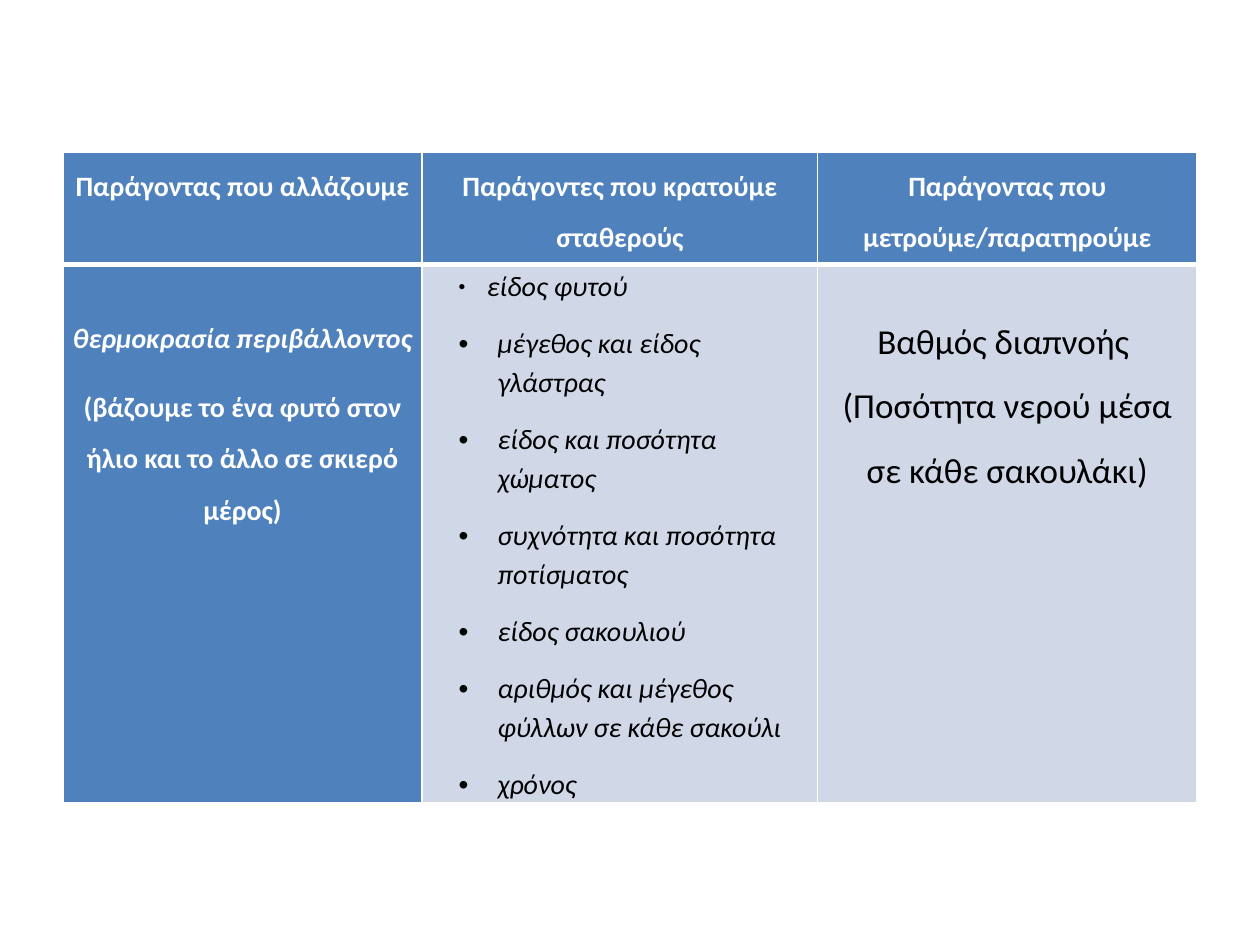
"""Build a slide with a table of the changed, constant and measured factors of an experiment."""
from dataclasses import dataclass

from lxml import etree
from pptx import Presentation
from pptx.dml.color import RGBColor
from pptx.enum import text as t
from pptx.oxml import ns
from pptx.util import Inches, Pt

WHITE = RGBColor(0xFF, 0xFF, 0xFF)
BLACK = RGBColor(0x00, 0x00, 0x00)
BLUE = RGBColor(0x4F, 0x81, 0xBD)
PALE = RGBColor(0xD0, 0xD8, 0xE8)
FONT = "Calibri"
COLUMN_WIDTHS = (2.85, 3.14, 3.01)
ROW_HEIGHTS = (0.89, 4.19)
BULLET_HANG = 0.31


@dataclass(frozen=True)
class Line:
    text: str
    size: int = 16
    italic: bool = False
    bullet_indent: float = 0
    hang: float = BULLET_HANG
    lead: str = ""
    after: int = 0


@dataclass(frozen=True)
class Factor:
    heading: str
    lines: tuple[Line, ...]
    fill: RGBColor
    color: RGBColor
    bold: bool = False
    top: float = 0


def constant(text: str) -> Line:
    return Line(text, italic=True, bullet_indent=0.53, after=10)


FACTORS = (
    Factor("Παράγοντας που αλλάζουμε", (
        Line("θερμοκρασία περιβάλλοντος ", italic=True, after=10),
        Line("(βάζουμε το ένα φυτό στον ήλιο και το άλλο σε σκιερό μέρος)", after=10),
    ), BLUE, WHITE, bold=True, top=0.32),
    Factor("Παράγοντες που κρατούμε σταθερούς", (
        Line("είδος φυτού", italic=True, bullet_indent=0.41, hang=0.19, lead=" ", after=10),
        constant("μέγεθος και είδος γλάστρας"),
        constant("είδος και ποσότητα χώματος"),
        constant("συχνότητα και ποσότητα ποτίσματος"),
        constant("είδος σακουλιού"),
        constant("αριθμός και μέγεθος φύλλων σε κάθε σακούλι"),
        constant("χρόνος"),
    ), PALE, BLACK),
    Factor("Παράγοντας που μετρούμε/παρατηρούμε", (
        Line("Βαθμός διαπνοής ", size=20),
        Line("(Ποσότητα νερού μέσα σε κάθε σακουλάκι)", size=20),
    ), PALE, BLACK, top=0.28),
)


def add_borders(cell, top: float, bottom: float) -> None:
    properties = cell._tc.get_or_add_tcPr()
    for edge, width in (("L", 1), ("R", 1), ("T", top), ("B", bottom)):
        border = etree.SubElement(properties, ns.qn(f"a:ln{edge}"), w=str(Pt(width)))
        solid = etree.SubElement(border, ns.qn("a:solidFill"))
        etree.SubElement(solid, ns.qn("a:srgbClr"), val=str(WHITE))


def add_bullet(paragraph, indent: float, hang: float) -> None:
    properties = paragraph._p.get_or_add_pPr()
    properties.set("marL", str(Inches(indent)))
    properties.set("indent", str(-Inches(hang)))
    etree.SubElement(properties, ns.qn("a:buFont"), typeface="Arial")
    etree.SubElement(properties, ns.qn("a:buChar"), char="•")


def write_line(paragraph, line: Line, color: RGBColor, bold: bool) -> None:
    paragraph.line_spacing = 1.15 if line.bullet_indent else 1.5
    paragraph.space_after = Pt(line.after)
    if line.bullet_indent:
        add_bullet(paragraph, line.bullet_indent, line.hang)
    else:
        paragraph.alignment = t.PP_ALIGN.CENTER
    if line.lead:
        lead = paragraph.add_run()
        lead.text = line.lead
        lead.font.size = Pt(11)
        lead.font.italic = False
    paragraph.add_run().text = line.text
    font = paragraph.font
    font.name, font.size = FONT, Pt(line.size)
    font.bold, font.italic = bold, line.italic
    font.color.rgb = color
    for run in paragraph.runs:
        run.font.name = FONT
        run.font.size = run.font.size or Pt(line.size)
        run.font.bold = bold
        if run.font.italic is None:
            run.font.italic = line.italic
        run.font.color.rgb = color


def fill_cell(cell, lines: tuple[Line, ...], fill: RGBColor, color: RGBColor,
              bold: bool, top: float = 0) -> None:
    cell.fill.solid()
    cell.fill.fore_color.rgb = fill
    cell.margin_left = cell.margin_right = Inches(0.07)
    cell.margin_top, cell.margin_bottom = Inches(top), 0
    frame = cell.text_frame
    for index, line in enumerate(lines):
        paragraph = frame.add_paragraph() if index else frame.paragraphs[0]
        write_line(paragraph, line, color, bold)


def main() -> None:
    deck = Presentation()
    deck.slide_width, deck.slide_height = Inches(10), Inches(7.5)
    slide = deck.slides.add_slide(deck.slide_layouts[6])
    table = slide.shapes.add_table(
        len(ROW_HEIGHTS), len(FACTORS), Inches(0.5), Inches(1.21),
        Inches(sum(COLUMN_WIDTHS)), Inches(sum(ROW_HEIGHTS))).table
    table.horz_banding = False
    for row, height in zip(table.rows, ROW_HEIGHTS):
        row.height = Inches(height)
    for index, (factor, width) in enumerate(zip(FACTORS, COLUMN_WIDTHS)):
        table.columns[index].width = Inches(width)
        heading, body = table.cell(0, index), table.cell(1, index)
        add_borders(heading, top=1, bottom=3)
        add_borders(body, top=3, bottom=1)
        fill_cell(heading, (Line(factor.heading),), BLUE, WHITE, bold=True)
        fill_cell(body, factor.lines, factor.fill, factor.color, factor.bold, factor.top)
    deck.save("out.pptx")


if __name__ == "__main__":
    main()
